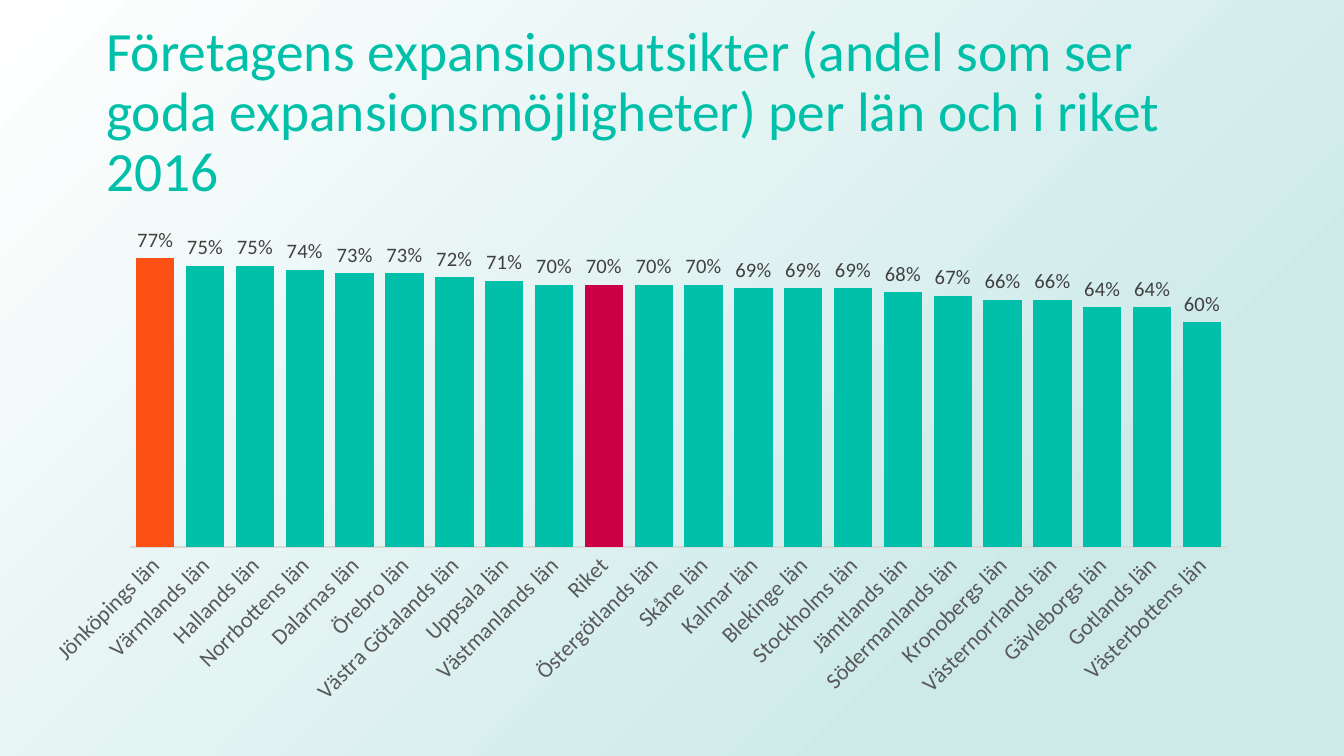
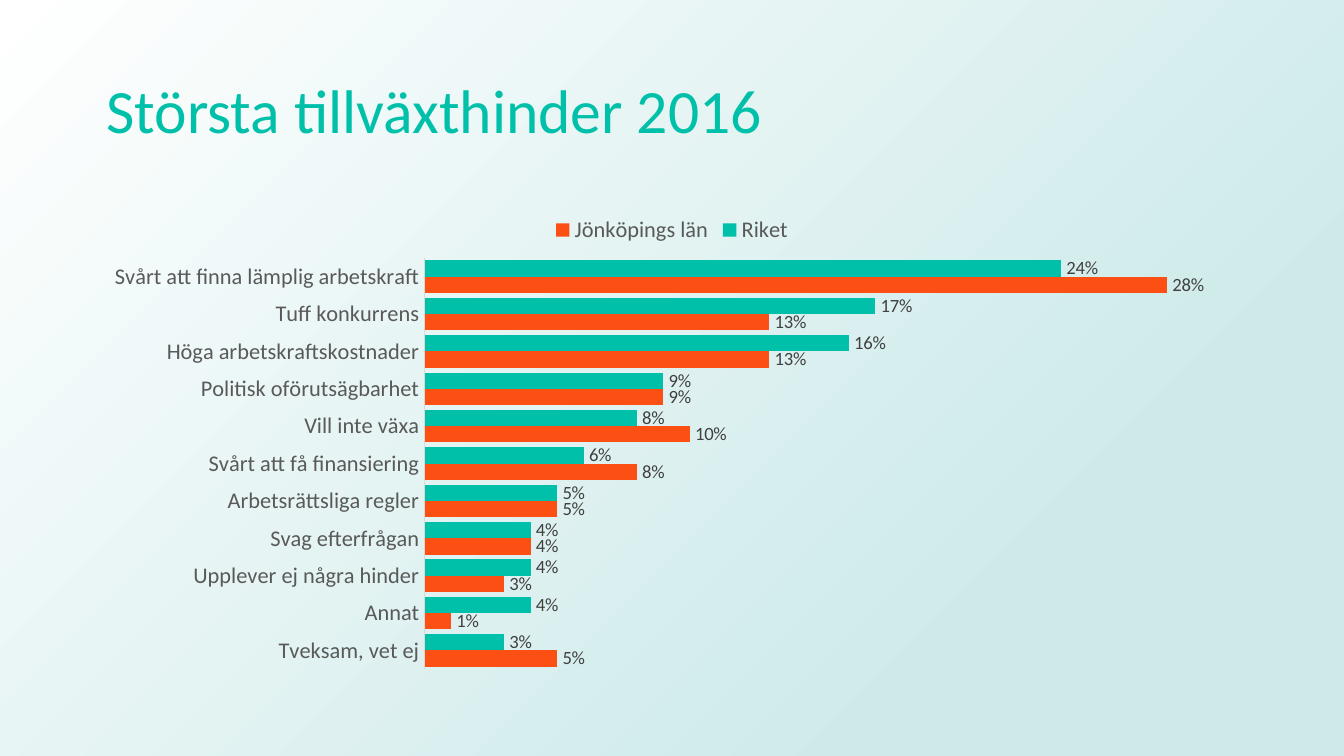
import dataclasses

import pptx
import pptx.chart.data
import pptx.dml.color
import pptx.enum.chart
import pptx.enum.shapes
import pptx.enum.text
import pptx.oxml
import pptx.oxml.ns
import pptx.util

Inches = pptx.util.Inches
Pt = pptx.util.Pt
COLUMNS = pptx.enum.chart.XL_CHART_TYPE.COLUMN_CLUSTERED
BARS = pptx.enum.chart.XL_CHART_TYPE.BAR_CLUSTERED


@dataclasses.dataclass(frozen=True)
class Theme:
    font: str = "Calibri"
    teal: str = "00C0A9"
    orange: str = "FB4F14"
    crimson: str = "CB0044"
    axis_text: str = "595959"
    label_text: str = "404040"
    axis_line: str = "D9D9D9"
    chart_text: str = "000000"
    mist: str = "CDEAE9"
    white: str = "FFFFFF"
    title_size: float = 33
    long_title_size: float = 29.7
    axis_size: float = 12
    chart_size: float = 10
    column_label_size: float = 11


THEME = Theme()

EXPANSION_OUTLOOK = {
    "Jönköpings län": 0.77,
    "Värmlands län": 0.75,
    "Hallands län": 0.75,
    "Norrbottens län": 0.74,
    "Dalarnas län": 0.73,
    "Örebro län": 0.73,
    "Västra Götalands län": 0.72,
    "Uppsala län": 0.71,
    "Västmanlands län": 0.7,
    "Riket": 0.7,
    "Östergötlands län": 0.7,
    "Skåne län": 0.7,
    "Kalmar län": 0.69,
    "Blekinge län": 0.69,
    "Stockholms län": 0.69,
    "Jämtlands län": 0.68,
    "Södermanlands län": 0.67,
    "Kronobergs län": 0.66,
    "Västernorrlands län": 0.66,
    "Gävleborgs län": 0.64,
    "Gotlands län": 0.64,
    "Västerbottens län": 0.6,
}

GROWTH_OBSTACLES = {
    "Svårt att finna lämplig arbetskraft": (0.24, 0.28),
    "Tuff konkurrens": (0.17, 0.13),
    "Höga arbetskraftskostnader": (0.16, 0.13),
    "Politisk oförutsägbarhet": (0.09, 0.09),
    "Vill inte växa": (0.08, 0.1),
    "Svårt att få finansiering": (0.06, 0.08),
    "Arbetsrättsliga regler": (0.05, 0.05),
    "Svag efterfrågan": (0.04, 0.04),
    "Upplever ej några hinder": (0.04, 0.03),
    "Annat": (0.04, 0.01),
    "Tveksam, vet ej": (0.03, 0.05),
}


def set_attributes(target, formats):
    for name, value in formats.items():
        setattr(target, name, value)


def fill_solid(fill, color):
    fill.solid()
    fill.fore_color.rgb = pptx.dml.color.RGBColor.from_string(color)


class Deck:
    def __init__(self, theme):
        self.theme = theme
        self.presentation = pptx.Presentation()
        width = Inches(10)
        set_attributes(self.presentation, {
            "slide_width": width, "slide_height": width * 9 // 16})
        self.slide = None

    def add_slide(self):
        first = self.slide is None
        layout = self.presentation.slide_layouts.get_by_name("Title Only")
        self.slide = self.presentation.slides.add_slide(layout)
        if first:
            self.add_master_background()

    def add_master_background(self):
        shape = self.slide.shapes.add_shape(
            pptx.enum.shapes.MSO_SHAPE.RECTANGLE, 0, 0,
            self.presentation.slide_width, self.presentation.slide_height)
        shape.shadow.inherit = False
        shape.line.fill.background()
        shape.fill.background()
        gradient = pptx.oxml.parse_xml(
            f'<a:gradFill {pptx.oxml.ns.nsdecls("a")}><a:gsLst>'
            f'<a:gs pos="23000"><a:srgbClr val="{self.theme.mist}"/></a:gs>'
            f'<a:gs pos="100000"><a:srgbClr val="{self.theme.white}"/></a:gs>'
            '</a:gsLst><a:path path="circle">'
            '<a:fillToRect l="100000" t="100000"/></a:path></a:gradFill>')
        no_fill = shape.element.xpath("./p:spPr/a:noFill")[0]
        no_fill.getparent().replace(no_fill, gradient)
        master = self.presentation.slide_master
        master.shapes[0].element.addprevious(shape.element)

    def format_font(self, font, size, color):
        set_attributes(font, {
            "name": self.theme.font, "size": Pt(size), "bold": False})
        font.color.rgb = pptx.dml.color.RGBColor.from_string(color)

    def add_title(self, text, size):
        title = self.slide.shapes.title
        set_attributes(title, {
            "left": Inches(0.69), "top": Inches(0.3),
            "width": Inches(8.62), "height": Inches(1.09)})
        set_attributes(title.text_frame, {
            "text": text, "word_wrap": True,
            "auto_size": pptx.enum.text.MSO_AUTO_SIZE.NONE,
            "vertical_anchor": pptx.enum.text.MSO_ANCHOR.MIDDLE})
        paragraph = title.text_frame.paragraphs[0]
        set_attributes(paragraph, {
            "alignment": pptx.enum.text.PP_ALIGN.LEFT, "line_spacing": 0.9})
        self.format_font(paragraph.runs[0].font, size, self.theme.teal)

    def add_bar_chart(self, kind, frame, plot_frame, categories, series,
                      maximum, label_size):
        data = pptx.chart.data.CategoryChartData(number_format="0%")
        data.categories = categories
        for name, values, _ in series:
            data.add_series(name, values)
        chart = self.slide.shapes.add_chart(
            kind, *map(Inches, frame), data).chart
        set_attributes(chart, {"has_title": False, "has_legend": False})
        self.format_font(
            chart.font, self.theme.chart_size, self.theme.chart_text)
        plot = chart.plots[0]
        set_attributes(plot, {
            "gap_width": 30, "overlap": 0, "vary_by_categories": False})
        for bars, (_, _, color) in zip(plot.series, series):
            fill_solid(bars.format.fill, color)
            bars.invert_if_negative = False
            labels = bars.data_labels
            set_attributes(labels, {
                "show_value": True, "number_format": "0%",
                "number_format_is_linked": False,
                "position": pptx.enum.chart.XL_LABEL_POSITION.OUTSIDE_END})
            self.format_font(labels.font, label_size, self.theme.label_text)
        self.format_axes(chart, maximum)
        self.place_plot(chart, frame, plot_frame)
        return chart

    def format_axes(self, chart, maximum):
        no_tick = pptx.enum.chart.XL_TICK_MARK.NONE
        axis = chart.category_axis
        set_attributes(axis, {
            "major_tick_mark": no_tick, "minor_tick_mark": no_tick,
            "has_major_gridlines": False})
        self.format_font(
            axis.tick_labels.font, self.theme.axis_size, self.theme.axis_text)
        fill_solid(axis.format.line.fill, self.theme.axis_line)
        axis.format.line.width = Pt(0.75)
        set_attributes(chart.value_axis, {
            "visible": False, "has_major_gridlines": False,
            "minimum_scale": 0, "maximum_scale": maximum})
        set_attributes(chart.value_axis.tick_labels, {
            "number_format": "0%", "number_format_is_linked": False})

    def place_plot(self, chart, frame, plot_frame):
        left, top, width, height = frame
        plot_left, plot_top, plot_width, plot_height = plot_frame
        ratios = {
            "x": (plot_left - left) / width, "y": (plot_top - top) / height,
            "w": plot_width / width, "h": plot_height / height}
        modes = "".join(f'<c:{key}Mode val="edge"/>' for key in "xy")
        sizes = "".join(
            f'<c:{key} val="{value:.4f}"/>' for key, value in ratios.items())
        layout = pptx.oxml.parse_xml(
            f'<c:layout {pptx.oxml.ns.nsdecls("c")}><c:manualLayout>'
            f'<c:layoutTarget val="inner"/>{modes}{sizes}'
            '</c:manualLayout></c:layout>')
        plot_area = chart.element.xpath(".//c:plotArea")[0]
        for old_layout in plot_area.xpath("./c:layout"):
            plot_area.remove(old_layout)
        plot_area.insert(0, layout)

    def color_point(self, chart, index, color):
        point = chart.plots[0].series[0].points[index]
        fill_solid(point.format.fill, color)

    def slant_categories(self, chart):
        body = chart.element.xpath(".//c:catAx/c:txPr/a:bodyPr")[0]
        body.set("rot", "-2700000")
        body.set("vert", "horz")

    def add_legend(self, chart):
        chart.has_legend = True
        set_attributes(chart.legend, {
            "position": pptx.enum.chart.XL_LEGEND_POSITION.TOP,
            "include_in_layout": False})
        self.format_font(
            chart.legend.font, self.theme.axis_size, self.theme.axis_text)


def build_expansion_slide(deck):
    theme = deck.theme
    deck.add_slide()
    deck.add_title(
        "Företagens expansionsutsikter (andel som ser goda "
        "expansionsmöjligheter) per län och i riket 2016",
        theme.long_title_size)
    counties = list(EXPANSION_OUTLOOK)
    chart = deck.add_bar_chart(
        COLUMNS, (0.19, 1.5, 9.12, 3.82), (0.97, 1.56, 8.16, 2.51), counties,
        [("Series 1", EXPANSION_OUTLOOK.values(), theme.teal)],
        0.9, theme.column_label_size)
    deck.slant_categories(chart)
    highlights = {"Jönköpings län": theme.orange, "Riket": theme.crimson}
    for county, color in highlights.items():
        deck.color_point(chart, counties.index(county), color)


def build_obstacles_slide(deck):
    theme = deck.theme
    deck.add_slide()
    deck.add_title("Största tillväxthinder 2016", theme.title_size)
    country, county = zip(*GROWTH_OBSTACLES.values())
    chart = deck.add_bar_chart(
        BARS, (0.69, 1.5, 8.62, 3.56), (3.16, 1.92, 5.92, 3.06),
        list(GROWTH_OBSTACLES),
        [("Riket", country, theme.teal),
         ("Jönköpings län", county, theme.orange)],
        0.3, theme.chart_size)
    chart.category_axis.reverse_order = True
    deck.add_legend(chart)


def main():
    deck = Deck(THEME)
    build_expansion_slide(deck)
    build_obstacles_slide(deck)
    deck.presentation.save("out.pptx")


if __name__ == "__main__":
    main()
